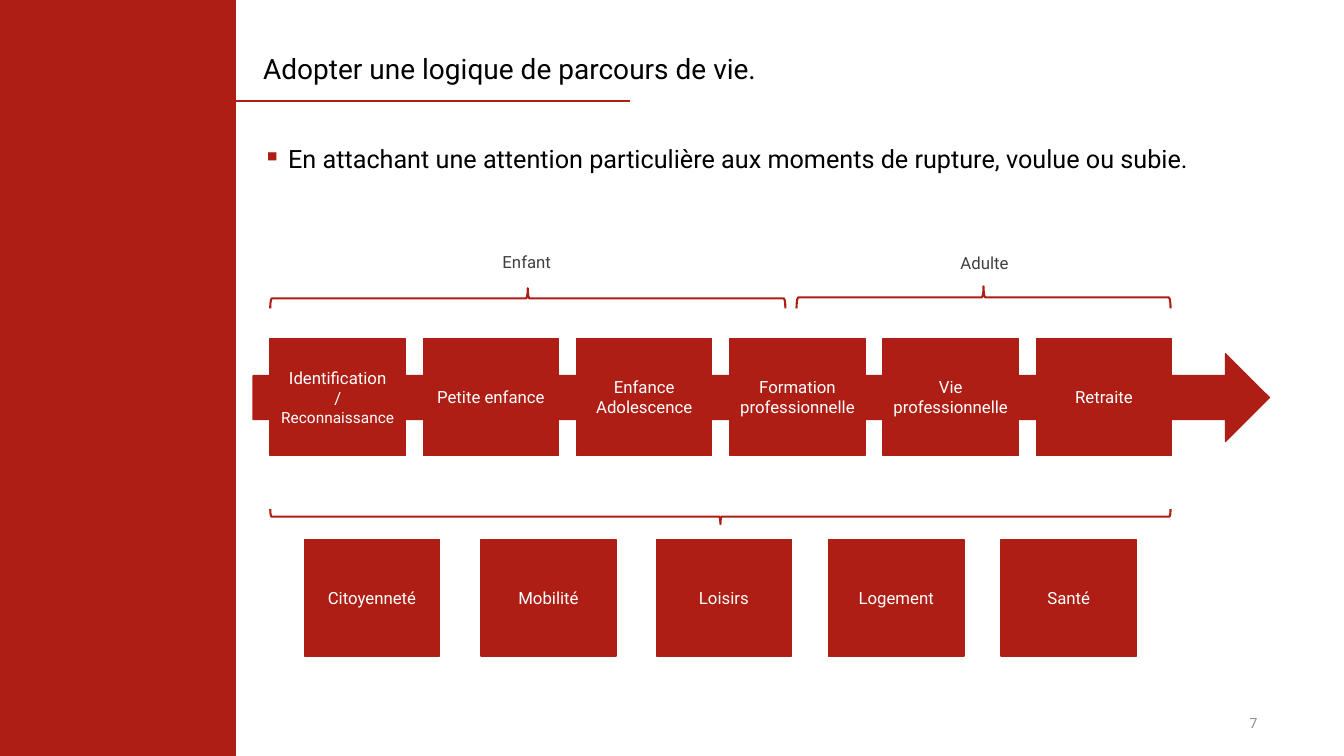
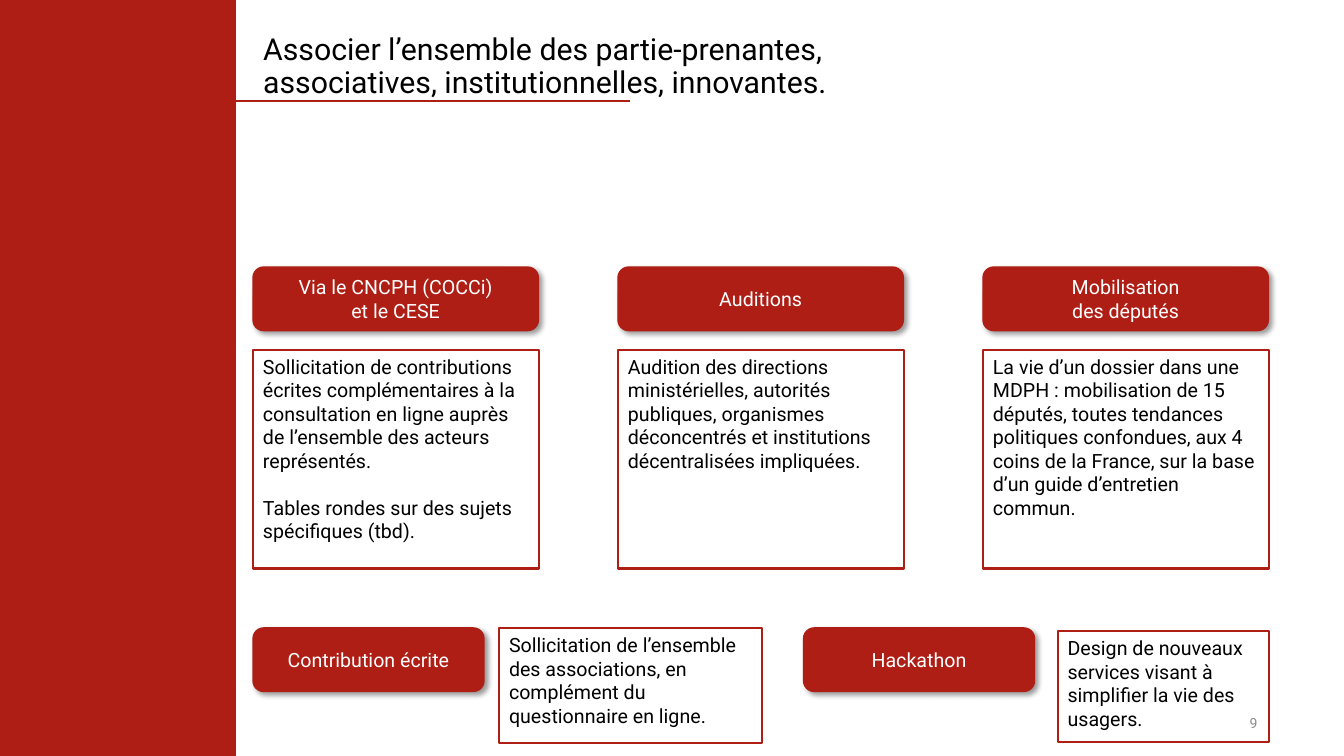
from lxml.etree import SubElement
from pptx import Presentation
from pptx.dml.color import RGBColor
from pptx.enum.shapes import MSO_CONNECTOR, MSO_SHAPE
from pptx.enum.text import MSO_ANCHOR, MSO_AUTO_SIZE, PP_ALIGN
from pptx.oxml.ns import qn
from pptx.util import Inches, Pt

FONT = "Roboto"
RED = "AE1E15"
WHITE = "FFFFFF"
BLACK = "000000"
DARK_GREY = "404040"
LIGHT_GREY = "8C8C8C"
LEFT = 2.51
CONTENT_WIDTH = 10.08
STAGE_WIDTH = 1.34
STAGE_HEIGHT = 1.16
STAGE_STEP = 1.52


def color(hex_string):
    return RGBColor.from_string(hex_string)


def place(shape, left, top, width, height):
    shape.left, shape.top = Inches(left), Inches(top)
    shape.width, shape.height = Inches(width), Inches(height)


def write(shape, text, size, text_color, align=PP_ALIGN.LEFT, anchor=MSO_ANCHOR.MIDDLE):
    frame = shape.text_frame
    frame.text = text
    frame.word_wrap = True
    frame.auto_size = MSO_AUTO_SIZE.NONE
    frame.vertical_anchor = anchor
    for paragraph in frame.paragraphs:
        paragraph.alignment = align
        paragraph.font.name = FONT
        paragraph.font.size = Pt(size)
        paragraph.font.color.rgb = color(text_color)
    return frame.paragraphs


def add_text(slide, text, left, top, width, height, size, text_color, **layout):
    box = slide.shapes.add_textbox(Inches(left), Inches(top), Inches(width), Inches(height))
    return write(box, text, size, text_color, **layout)


def add_shape(slide, kind, left, top, width, height, fill=RED, line_width=1):
    shape = slide.shapes.add_shape(
        kind, Inches(left), Inches(top), Inches(width), Inches(height))
    shape.shadow.inherit = False
    if fill:
        shape.fill.solid()
        shape.fill.fore_color.rgb = color(fill)
    else:
        shape.fill.background()
    shape.line.color.rgb = color(RED)
    shape.line.width = Pt(line_width)
    return shape


def add_stage(slide, text, left, top):
    shape = add_shape(slide, MSO_SHAPE.RECTANGLE, left, top, STAGE_WIDTH, STAGE_HEIGHT)
    shape.text_frame.margin_left = shape.text_frame.margin_right = Inches(0.05)
    return write(shape, text, 12, WHITE, PP_ALIGN.CENTER)


def add_brace(slide, left, top, width, height, rotation):
    middle_x, middle_y = left + width / 2, top + height / 2
    brace = add_shape(slide, MSO_SHAPE.RIGHT_BRACE, middle_x - height / 2,
                      middle_y - width / 2, height, width, fill=None, line_width=1.5)
    brace.rotation = rotation
    brace.adjustments[0] = 0.08
    brace.adjustments[1] = 0.5


def add_heading(slide, text, left, top, width):
    shape = add_shape(slide, MSO_SHAPE.ROUNDED_RECTANGLE, left, top, width, 0.63)
    effects = shape._element.spPr.find(qn("a:effectLst"))
    shadow = SubElement(effects, qn("a:outerShdw"), blurRad=str(Pt(4)),
                        dist=str(Pt(3)), dir="2700000", algn="tl", rotWithShape="0")
    shade = SubElement(shadow, qn("a:srgbClr"), val=BLACK)
    SubElement(shade, qn("a:alpha"), val="40000")
    write(shape, text, 14, WHITE, PP_ALIGN.CENTER)


def add_details(slide, text, left, top, width, height):
    shape = add_shape(slide, MSO_SHAPE.RECTANGLE, left, top, width, height,
                      fill=None, line_width=1.5)
    for paragraph in write(shape, text, 14, BLACK, anchor=MSO_ANCHOR.TOP)[1:]:
        paragraph.space_before = Pt(16.5)


def add_bullet(paragraph, character):
    properties = paragraph._p.get_or_add_pPr()
    properties.set("marL", str(Inches(0.25)))
    properties.set("indent", str(-Inches(0.25)))
    bullet_color = SubElement(properties, qn("a:buClr"))
    SubElement(bullet_color, qn("a:srgbClr"), val=RED)
    bullet = SubElement(properties, qn("a:buChar"), char=character)
    font = properties.find(qn("a:defRPr"))
    font.addprevious(bullet_color)
    font.addprevious(bullet)


def decorate_layout(layout, slide):
    for placeholder in list(layout.placeholders)[1:]:
        placeholder._element.getparent().remove(placeholder._element)
    band = add_shape(slide, MSO_SHAPE.RECTANGLE, 0, 0, 2.34, 7.5)
    band.line.fill.background()
    rule = slide.shapes.add_connector(
        MSO_CONNECTOR.STRAIGHT, Inches(2.34), Inches(1), Inches(6.25), Inches(1))
    rule.line.color.rgb = color(RED)
    rule.line.width = Pt(1.5)
    SubElement(rule._element.spPr, qn("a:effectLst"))
    for shape in (band, rule):
        layout.shapes._spTree.append(shape._element)


def add_slide(presentation, title_text, title_top, title_size, number):
    slide = presentation.slides.add_slide(presentation.slide_layouts[5])
    title = slide.shapes.title
    place(title, LEFT, title_top, CONTENT_WIDTH, 0.6)
    for paragraph in write(title, title_text, title_size, BLACK):
        paragraph.line_spacing = 0.9
    add_text(slide, number, 9.57, 6.97, 3, 0.4, 10, LIGHT_GREY, align=PP_ALIGN.RIGHT)
    return slide


def build_life_path(presentation):
    slide = add_slide(presentation, "Adopter une logique de parcours de vie.", 0.4, 20, "7")
    message = add_text(
        slide,
        "En attachant une attention particulière aux moments de rupture, voulue ou subie.",
        LEFT, 1.41, CONTENT_WIDTH, 0.5, 18, BLACK, anchor=MSO_ANCHOR.TOP)[0]
    message.line_spacing = 0.9
    add_bullet(message, "▪")

    for label, left, top in (("Enfant", 4.81, 2.4), ("Adulte", 9.35, 2.41)):
        add_text(slide, label, left, top, 0.83, 0.4, 12, DARK_GREY, align=PP_ALIGN.CENTER)
    add_brace(slide, 2.68, 2.86, 5.11, 0.2, 270)
    add_brace(slide, 7.9, 2.84, 3.71, 0.22, 270)
    add_brace(slide, 2.68, 5.05, 8.93, 0.15, 90)

    add_shape(slide, MSO_SHAPE.RIGHT_ARROW, LEFT, 3.51, CONTENT_WIDTH, 0.87)
    stages = ("Identification\n/\nReconnaissance", "Petite enfance", "Enfance\nAdolescence",
              "Formation\nprofessionnelle", "Vie\nprofessionnelle", "Retraite")
    for index, stage in enumerate(stages):
        paragraphs = add_stage(slide, stage, 2.68 + index * STAGE_STEP, 3.36)
        if index == 0:
            paragraphs[-1].font.size = Pt(11)

    domains = (("Citoyenneté", 3.02), ("Mobilité", 4.77), ("Loisirs", 6.51),
               ("Logement", 8.22), ("Santé", 9.93))
    for domain, left in domains:
        add_stage(slide, domain, left, 5.35)
    return slide


def build_stakeholders(presentation):
    slide = add_slide(
        presentation,
        "Associer l’ensemble des partie-prenantes,\v"
        "associatives, institutionnelles, innovantes.", 0.37, 21.6, "9")
    columns = (
        ("Via le CNCPH (COCCi)\net le CESE",
         "Sollicitation de contributions écrites complémentaires à la consultation en ligne "
         "auprès de l’ensemble des acteurs représentés.\n"
         "Tables rondes sur des sujets spécifiques (tbd)."),
        ("Auditions",
         "Audition des directions ministérielles, autorités publiques, organismes "
         "déconcentrés et institutions décentralisées impliquées."),
        ("Mobilisation\ndes députés",
         "La vie d’un dossier dans une MDPH : mobilisation de 15 députés, toutes tendances "
         "politiques confondues, aux 4 coins de la France, sur la base d’un guide "
         "d’entretien commun."),
    )
    for index, (heading, details) in enumerate(columns):
        left = LEFT + index * 3.62
        add_heading(slide, heading, left, 2.65, 2.83)
        add_details(slide, details, left, 3.47, 2.84, 2.17)

    add_heading(slide, "Contribution écrite", LEFT, 6.23, 2.29)
    add_details(slide, "Sollicitation de l’ensemble des associations, en complément du "
                "questionnaire en ligne.", 4.95, 6.23, 2.61, 1.14)
    add_heading(slide, "Hackathon", 7.97, 6.23, 2.29)
    add_details(slide, "Design de nouveaux services visant à simplifier la vie des usagers.",
                10.49, 6.26, 2.1, 1.1)


def main():
    presentation = Presentation()
    presentation.slide_width = Inches(13.33)
    presentation.slide_height = Inches(7.5)
    first_slide = build_life_path(presentation)
    decorate_layout(first_slide.slide_layout, first_slide)
    build_stakeholders(presentation)
    presentation.save("out.pptx")


if __name__ == "__main__":
    main()
